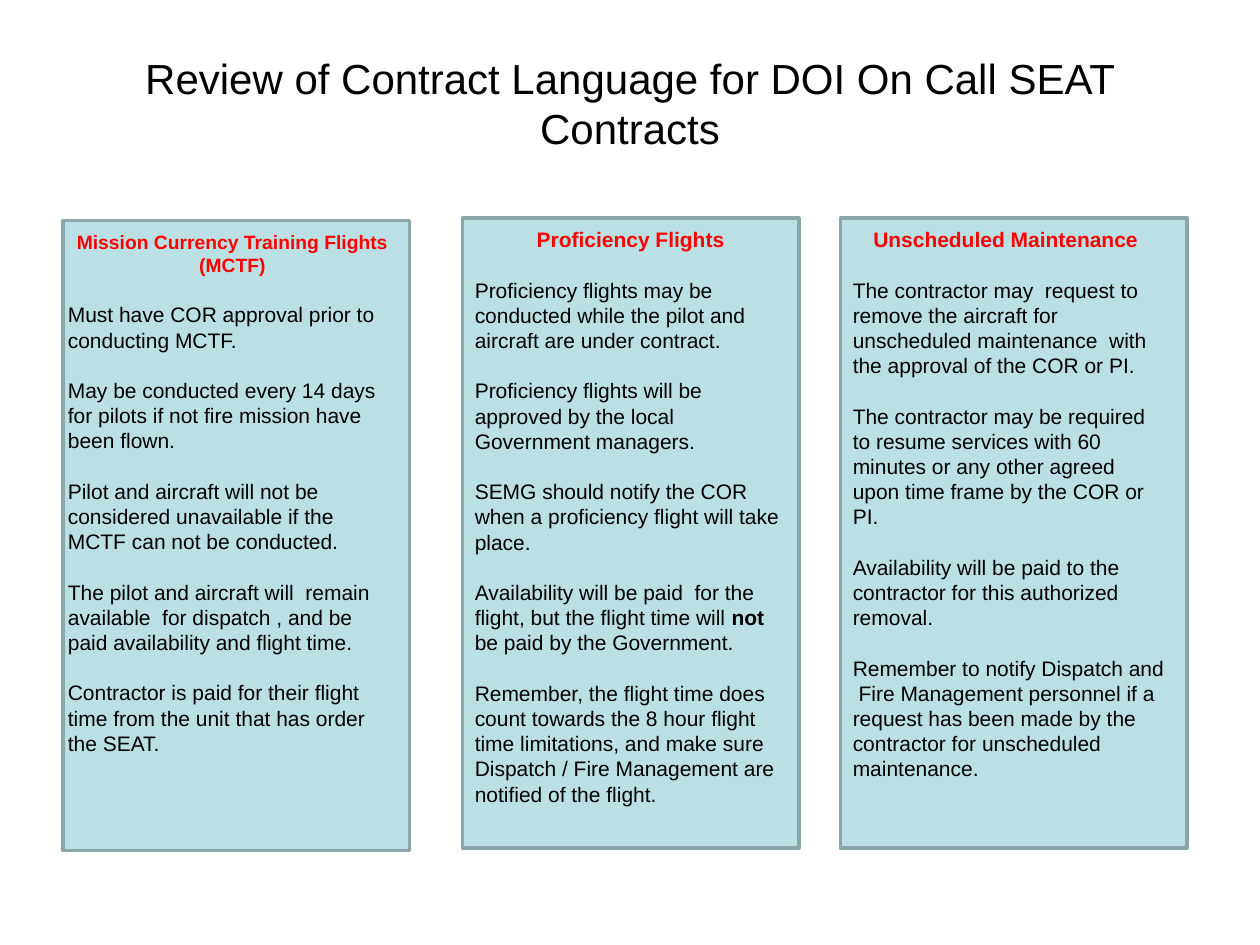
from pptx import Presentation
from pptx.dml.color import RGBColor
from pptx.enum import shapes, text
from pptx.util import Inches, Pt

COLORS = {"black": "000000", "heading": "FF0000", "panel": "BBE0E3", "border": "8AA6A8"}
FONT = "Arial"
BODY_SIZE = 12
GAP = 14.4  # one body line, in points

# Each panel: box, text box, heading size, heading lines, body paragraphs.
# A body paragraph is a list of (text, bold) runs, or a plain string.
PANELS = [
    {
        "box": (0.5, 1.75, 2.75, 5), "text": (0.44, 1.78, 2.81, 4.51), "size": 11,
        "heading": ["Mission Currency Training Flights", "(MCTF)"],
        "body": [
            "Must have COR approval prior to conducting MCTF.",
            "May be conducted every 14 days for pilots if not fire mission have been flown.",
            "Pilot and aircraft will not be considered unavailable if the MCTF can not be conducted.",
            "The pilot and aircraft will  remain  available  for dispatch , and be paid "
            "availability and flight time.",
            "Contractor is paid for their flight time from the unit that has order the SEAT.",
        ],
    },
    {
        "box": (3.67, 1.73, 2.67, 5), "text": (3.67, 1.75, 2.67, 5.15), "size": 12,
        "heading": ["Proficiency Flights"],
        "body": [
            "Proficiency flights may be conducted while the pilot and aircraft are under contract.",
            "Proficiency flights will be approved by the local Government managers.",
            "SEMG should notify the COR when a proficiency flight will take place.",
            [("Availability will be paid  for the flight, but the flight time will ", False),
             ("not ", True), ("be paid by the Government.", False)],
            "Remember, the flight time does count towards the 8 hour flight time limitations, "
            "and make sure Dispatch / Fire Management are notified of the flight.",
        ],
    },
    {
        "box": (6.67, 1.73, 2.75, 5), "text": (6.67, 1.75, 2.67, 4.54), "size": 12,
        "heading": ["Unscheduled Maintenance "],
        "body": [
            "The contractor may  request to remove the aircraft for unscheduled maintenance  "
            "with the approval of the COR or PI.",
            "The contractor may be required to resume services with 60 minutes or any other "
            "agreed upon time frame by the COR or PI.",
            "Availability will be paid to the contractor for this authorized removal.",
            "Remember to notify Dispatch and  Fire Management personnel if a request has been "
            "made by the contractor for unscheduled maintenance.",
        ],
    },
]


def color(name):
    return RGBColor.from_string(COLORS[name])


def add_text_box(s, at, anchor=text.MSO_ANCHOR.TOP):
    tf = s.shapes.add_textbox(*map(Inches, at)).text_frame
    tf.word_wrap = True
    tf.vertical_anchor = anchor
    return tf


def add_paragraph(tf, runs, size, fill="black", **formats):
    """Fill the first empty paragraph, or append a new one."""
    p = tf.paragraphs[0] if not tf.text else tf.add_paragraph()
    for name, value in formats.items():
        setattr(p, name, value)
    for words, bold in runs:
        r = p.add_run()
        r.text = words
        for name, value in {"name": FONT, "size": Pt(size), "bold": bold}.items():
            setattr(r.font, name, value)
        r.font.color.rgb = color(fill)


def add_panel_box(s, at):
    sp = s.shapes.add_shape(shapes.MSO_SHAPE.RECTANGLE, *map(Inches, at))
    sp.shadow.inherit = False
    sp.fill.solid()
    sp.fill.fore_color.rgb = color("panel")
    sp.line.color.rgb = color("border")
    sp.line.width = Pt(2)


def add_panel_text(s, panel):
    tf = add_text_box(s, panel["text"])
    for line in panel["heading"]:
        add_paragraph(tf, [(line, True)], panel["size"], "heading",
                      alignment=text.PP_ALIGN.CENTER)
    for item in panel["body"]:
        runs = [(item, False)] if isinstance(item, str) else item
        add_paragraph(tf, runs, BODY_SIZE, space_before=Pt(GAP),
                      alignment=text.PP_ALIGN.LEFT)


def main():
    prs = Presentation()
    prs.slide_width, prs.slide_height = Inches(10), Inches(7.5)
    s = prs.slides.add_slide(prs.slide_layouts[6])

    # Title
    tf = add_text_box(s, (0.5, 0.3, 9, 1.03), text.MSO_ANCHOR.MIDDLE)
    add_paragraph(tf, [("Review of Contract Language for DOI On Call SEAT Contracts", False)],
                  24, alignment=text.PP_ALIGN.CENTER)

    # Panels, then their text on top
    for panel in PANELS:
        add_panel_box(s, panel["box"])
    for panel in PANELS:
        add_panel_text(s, panel)

    prs.save("out.pptx")


if __name__ == "__main__":
    main()
